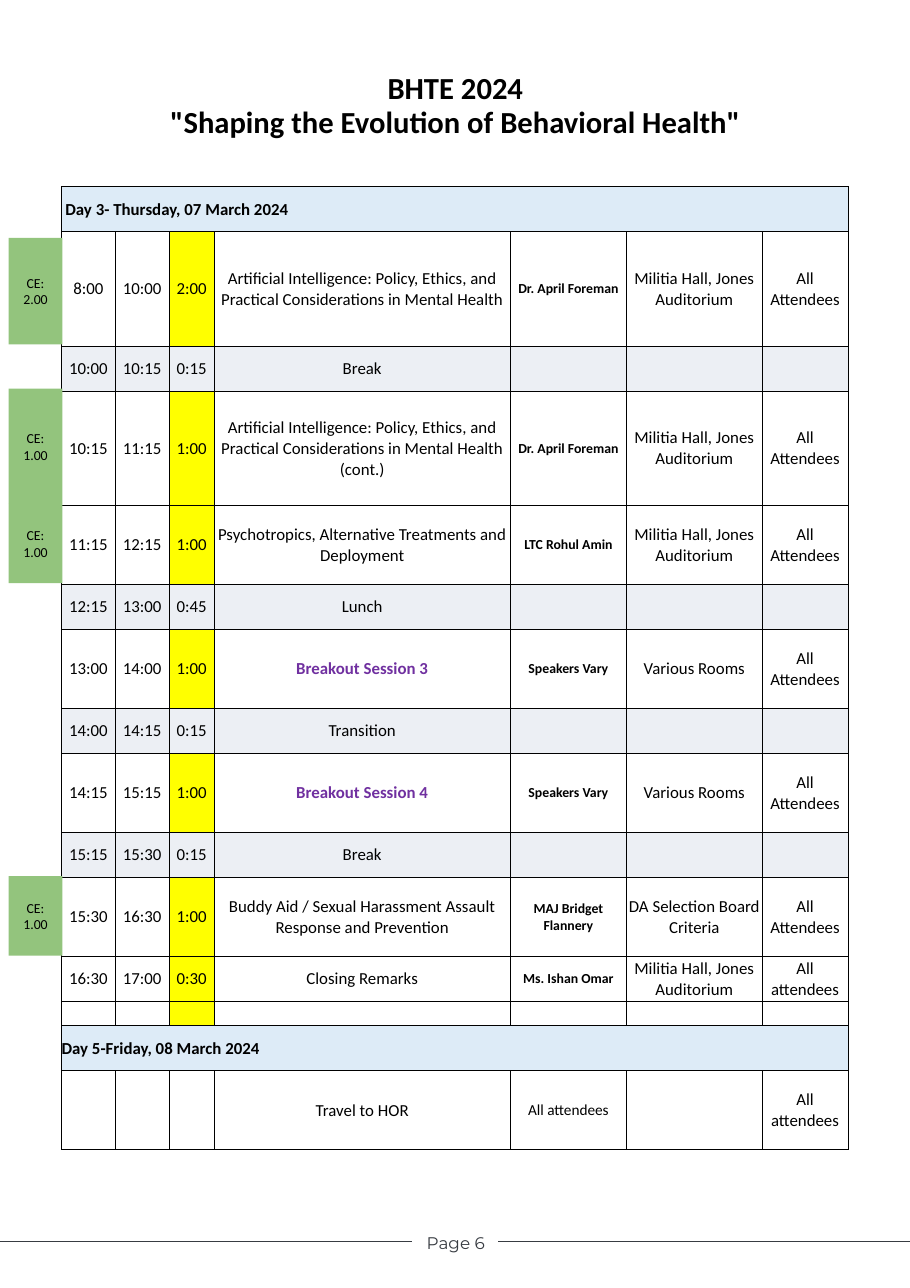
import dataclasses
import typing

import lxml.etree
import pptx
import pptx.dml.color
import pptx.enum.shapes
import pptx.enum.text
import pptx.oxml.ns
import pptx.util

Cm = pptx.util.Cm
Pt = pptx.util.Pt
ALIGN = pptx.enum.text.PP_ALIGN
ANCHOR = pptx.enum.text.MSO_ANCHOR


@dataclasses.dataclass(frozen=True)
class Theme:
    font: str = "Calibri"
    footer_font: str = "Montserrat"
    ink: str = "000000"
    footer: str = "383C42"
    day: str = "DDEBF7"
    pause: str = "ECEFF4"
    duration: str = "FFFF00"
    credit: str = "93C47D"
    breakout: str = "7030A0"
    title_size: int = 20
    body_size: int = 11
    attendee_size: int = 10
    small_size: int = 9
    line: float = 0.75


@dataclasses.dataclass(frozen=True)
class Row:
    kind: str
    height: float
    texts: tuple[str, ...]


class Credit(typing.NamedTuple):
    hours: str
    top: float
    height: float


THEME = Theme()
PAGE_WIDTH, PAGE_HEIGHT = 20.99, 29.72
RULE_LENGTH = 9.5
SHORT, MEDIUM, TALL, SPACER = 1.04, 1.82, 2.64, 0.56
COLUMNS = (1.24, 1.24, 1.04, 6.83, 2.68, 3.13, 1.98)
DURATION, TOPIC, SPEAKER = 2, 3, 4
HALL = "Militia Hall, Jones Auditorium"
ALL = "All Attendees"
AI_TALK = "Artificial Intelligence: Policy, Ethics, and Practical Considerations in Mental Health"


def day(text: str) -> Row:
    return Row("day", SHORT, (text,) + ("",) * 6)


def pause(start: str, end: str, length: str, name: str) -> Row:
    return Row("pause", SHORT, (start, end, length, name, "", "", ""))


def session(*texts: str, height: float = MEDIUM) -> Row:
    return Row("session", height, texts)


ROWS = (
    day(" Day 3- Thursday, 07 March 2024"),
    session("8:00", "10:00", "2:00", AI_TALK, "Dr. April Foreman", HALL, ALL, height=TALL),
    pause("10:00", "10:15", "0:15", "Break"),
    session("10:15", "11:15", "1:00", AI_TALK + " (cont.)", "Dr. April Foreman", HALL, ALL, height=TALL),
    session("11:15", "12:15", "1:00", "Psychotropics, Alternative Treatments and Deployment",
            "LTC Rohul Amin", HALL, ALL),
    pause("12:15", "13:00", "0:45", "Lunch"),
    session("13:00", "14:00", "1:00", "Breakout Session 3", "Speakers Vary", "Various Rooms", ALL),
    pause("14:00", "14:15", "0:15", "Transition"),
    session("14:15", "15:15", "1:00", "Breakout Session 4", "Speakers Vary", "Various Rooms", ALL),
    pause("15:15", "15:30", "0:15", "Break"),
    session("15:30", "16:30", "1:00", "Buddy Aid / Sexual Harassment Assault Response and Prevention",
            "MAJ Bridget Flannery", "DA Selection Board Criteria", ALL),
    session("16:30", "17:00", "0:30", "Closing Remarks", "Ms. Ishan Omar", HALL,
            "All attendees", height=SHORT),
    session(*("",) * 7, height=SPACER),
    day("Day 5-Friday, 08 March 2024"),
    Row("travel", MEDIUM, ("", "", "", "Travel to HOR", "All attendees", "", "All attendees")),
)

CREDITS = (
    Credit("2.00", 5.49, 2.46),
    Credit("1.00", 8.97, 2.66),
    Credit("1.00", 11.63, 1.83),
    Credit("1.00", 20.22, 1.83),
)


def rgb(color: str) -> pptx.dml.color.RGBColor:
    return pptx.dml.color.RGBColor.from_string(color)


def write(tf, text: str, *, size: int = THEME.body_size, font: str = THEME.font,
          color: str = THEME.ink, bold: bool = False, align=ALIGN.CENTER,
          spacing: float | None = None) -> None:
    """Fill a text frame, one paragraph for each line of text."""
    for i, line in enumerate(text.split("\n")):
        p = tf.add_paragraph() if i else tf.paragraphs[0]
        p.text = line
        p.alignment = align
        if spacing:
            p.line_spacing = spacing
        for r in p.runs:
            r.font.size, r.font.name, r.font.bold = Pt(size), font, bold
            r.font.color.rgb = rgb(color)
        if not line:
            p._p.get_or_add_endParaRPr().set("sz", str(size * 100))


def set_margins(target, x: float = 0, y: float = 0) -> None:
    target.margin_left = target.margin_right = Cm(x)
    target.margin_top = target.margin_bottom = Cm(y)


def set_borders(cell) -> None:
    tc_pr = cell._tc.get_or_add_tcPr()
    qn = pptx.oxml.ns.qn
    for side in ("a:lnL", "a:lnR", "a:lnT", "a:lnB"):
        ln = lxml.etree.SubElement(tc_pr, qn(side), w=str(Pt(THEME.line)))
        fill = lxml.etree.SubElement(ln, qn("a:solidFill"))
        lxml.etree.SubElement(fill, qn("a:srgbClr"), val=THEME.ink)


def cell_fill(row: Row, column: int) -> str | None:
    if row.kind == "session":
        return THEME.duration if column == DURATION else None
    return {"day": THEME.day, "pause": THEME.pause}.get(row.kind)


def cell_format(row: Row, column: int) -> dict[str, typing.Any]:
    if row.kind == "day":
        return {"bold": True, "align": ALIGN.LEFT}
    if column == SPEAKER and row.kind == "travel":
        return {"size": THEME.attendee_size}
    if column == SPEAKER and row.kind == "session":
        return {"size": THEME.small_size, "bold": True}
    if column == TOPIC and row.texts[TOPIC].startswith("Breakout"):
        return {"color": THEME.breakout, "bold": True}
    return {}


def add_schedule(slide) -> None:
    height = sum(row.height for row in ROWS)
    table = slide.shapes.add_table(len(ROWS), len(COLUMNS), Cm(1.42), Cm(4.31),
                                   Cm(sum(COLUMNS)), Cm(height)).table
    table.first_row = table.horz_banding = False
    for column, width in zip(table.columns, COLUMNS):
        column.width = Cm(width)
    for i, row in enumerate(ROWS):
        table.rows[i].height = Cm(row.height)
        for j, text in enumerate(row.texts):
            cell = table.cell(i, j)
            set_margins(cell)
            cell.vertical_anchor = ANCHOR.MIDDLE
            set_borders(cell)
            color = cell_fill(row, j)
            if color:
                cell.fill.solid()
                cell.fill.fore_color.rgb = rgb(color)
            else:
                cell.fill.background()
            write(cell.text_frame, text, **cell_format(row, j))
        if row.kind == "day":
            table.cell(i, 0).merge(table.cell(i, len(COLUMNS) - 1))


def add_credit(slide, credit: Credit) -> None:
    sp = slide.shapes.add_shape(pptx.enum.shapes.MSO_SHAPE.RECTANGLE, Cm(0.2),
                                Cm(credit.top), Cm(1.24), Cm(credit.height))
    sp.shadow.inherit = False
    sp.fill.solid()
    sp.fill.fore_color.rgb = rgb(THEME.credit)
    sp.line.fill.background()
    set_margins(sp.text_frame, 0.25, 0.25)
    sp.text_frame.vertical_anchor = ANCHOR.MIDDLE
    write(sp.text_frame, f"CE:\n{credit.hours}", size=THEME.small_size)


def add_label(slide, box: tuple[float, ...], text: str, anchor, margins: tuple[float, float],
              **text_format: typing.Any) -> None:
    tf = slide.shapes.add_textbox(*map(Cm, box)).text_frame
    tf.word_wrap = True
    tf.vertical_anchor = anchor
    set_margins(tf, *margins)
    write(tf, text, **text_format)


def add_rule(slide, start: float, y: float) -> None:
    line = slide.shapes.add_connector(pptx.enum.shapes.MSO_CONNECTOR.STRAIGHT,
                                      Cm(start), Cm(y), Cm(start + RULE_LENGTH), Cm(y))
    line.line.color.rgb = rgb(THEME.footer)
    line.line.width = Pt(THEME.line)
    lxml.etree.SubElement(line._element.spPr, pptx.oxml.ns.qn("a:effectLst"))


def main() -> None:
    prs = pptx.Presentation()
    prs.slide_width, prs.slide_height = Cm(PAGE_WIDTH), Cm(PAGE_HEIGHT)
    slide = prs.slides.add_slide(prs.slide_layouts[6])
    add_label(slide, (1.45, 1.47, 18.11, 1.98),
              'BHTE 2024\v"Shaping the Evolution of Behavioral Health"', ANCHOR.MIDDLE,
              (0.25, 0.13), size=THEME.title_size, bold=True, spacing=0.9)
    add_schedule(slide)
    for credit in CREDITS:
        add_credit(slide, credit)
    for start in (0, PAGE_WIDTH - RULE_LENGTH):
        add_rule(slide, start, 28.65)
    add_label(slide, (9.23, 28.37, 2.57, 0.56), "Page 6", ANCHOR.TOP, (0, 0.08),
              font=THEME.footer_font, color=THEME.footer)
    prs.save("out.pptx")


if __name__ == "__main__":
    main()
